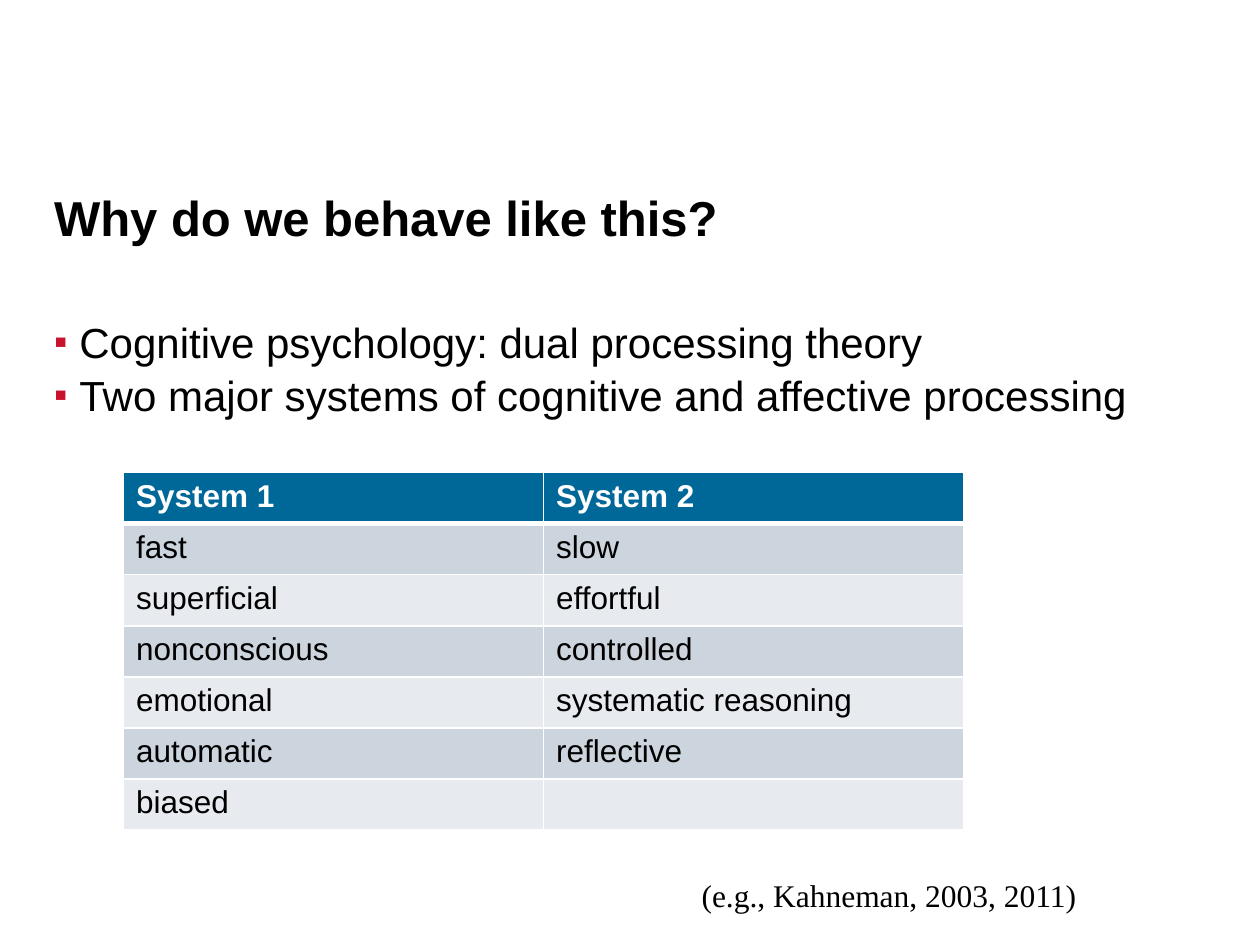
from dataclasses import dataclass

from lxml.etree import SubElement
from pptx import Presentation
from pptx.dml.color import RGBColor
from pptx.oxml.ns import qn
from pptx.slide import Slide
from pptx.table import _Cell
from pptx.text.text import TextFrame, _Paragraph
from pptx.util import Inches, Pt


@dataclass(frozen=True)
class Theme:
    sans: str = "Arial"
    serif: str = "Times New Roman"
    black: str = "000000"
    white: str = "FFFFFF"
    bullet: str = "C9122B"
    header: str = "006899"
    bands: tuple[str, str] = ("CCD4DE", "E7EBEF")
    title_size: int = 28
    body_size: int = 24
    small_size: int = 18


@dataclass(frozen=True)
class Box:
    left: float
    top: float
    width: float
    height: float

    def lengths(self) -> list[Inches]:
        return [Inches(n) for n in (self.left, self.top, self.width, self.height)]


THEME = Theme()
TITLE_BOX = Box(0.43, 1.49, 9.21, 0.92)
BODY_BOX = Box(0.43, 2.49, 9.21, 4.33)
TABLE_BOX = Box(0.98, 3.75, 6.67, 2.84)
CITATION_BOX = Box(5.47, 6.9, 3.27, 0.4)

BULLETS = (
    "Cognitive psychology: dual processing theory",
    "Two major systems of cognitive and affective processing",
)
SYSTEMS = (
    ("System 1", "System 2"),
    ("fast", "slow"),
    ("superficial", "effortful"),
    ("nonconscious", "controlled"),
    ("emotional", "systematic reasoning"),
    ("automatic", "reflective"),
    ("biased", ""),
)


def format_runs(paragraph: _Paragraph, size: int, color: str = THEME.black,
                bold: bool = False, font: str = THEME.sans) -> None:
    for run in paragraph.runs:
        run.font.name = font
        run.font.size = Pt(size)
        run.font.bold = bold
        run.font.color.rgb = RGBColor.from_string(color)


def add_text(slide: Slide, box: Box, text: str, inset: bool = False) -> TextFrame:
    text_frame = slide.shapes.add_textbox(*box.lengths()).text_frame
    text_frame.word_wrap = not inset
    if not inset:
        text_frame.margin_left = text_frame.margin_right = 0
        text_frame.margin_top = text_frame.margin_bottom = 0
    text_frame.text = text
    return text_frame


def add_bullet(paragraph: _Paragraph) -> None:
    properties = paragraph._p.get_or_add_pPr()
    properties.set("marL", str(Inches(0.2)))
    properties.set("indent", str(Inches(-0.2)))
    color = SubElement(properties, qn("a:buClr"))
    SubElement(color, qn("a:srgbClr"), val=THEME.bullet)
    SubElement(properties, qn("a:buSzPct"), val="90000")
    SubElement(properties, qn("a:buFont"), typeface=THEME.sans)
    SubElement(properties, qn("a:buChar"), char="▪")


def style_cell(cell: _Cell, fill: str, bottom_width: int) -> None:
    # Borders come before the fill in the cell properties
    properties = cell._tc.get_or_add_tcPr()
    for side, width in (("L", 1), ("R", 1), ("T", 1), ("B", bottom_width)):
        line = SubElement(properties, qn(f"a:ln{side}"), w=str(Pt(width)))
        solid = SubElement(line, qn("a:solidFill"))
        SubElement(solid, qn("a:srgbClr"), val=THEME.white)
    cell.fill.solid()
    cell.fill.fore_color.rgb = RGBColor.from_string(fill)


def add_systems_table(slide: Slide) -> None:
    row_count, column_count = len(SYSTEMS), len(SYSTEMS[0])
    table = slide.shapes.add_table(row_count, column_count, *TABLE_BOX.lengths()).table
    for column in table.columns:
        column.width = Inches(TABLE_BOX.width / column_count)
    for row_index, labels in enumerate(SYSTEMS):
        is_header = row_index == 0
        fill = THEME.header if is_header else THEME.bands[(row_index - 1) % 2]
        color = THEME.white if is_header else THEME.black
        table.rows[row_index].height = Inches(TABLE_BOX.height / row_count)
        for column_index, label in enumerate(labels):
            cell = table.cell(row_index, column_index)
            cell.text_frame.text = label
            format_runs(cell.text_frame.paragraphs[0], THEME.small_size, color, is_header)
            style_cell(cell, fill, 3 if is_header else 1)


def main() -> None:
    presentation = Presentation()
    presentation.slide_width = Inches(10)
    presentation.slide_height = Inches(7.5)
    slide = presentation.slides.add_slide(presentation.slide_layouts[6])

    # Title
    title = add_text(slide, TITLE_BOX, "Why do we behave like this?")
    format_runs(title.paragraphs[0], THEME.title_size, bold=True)

    # Bullets
    body = add_text(slide, BODY_BOX, "\n".join(BULLETS))
    for paragraph in body.paragraphs:
        paragraph.line_spacing = 1.05
        add_bullet(paragraph)
        format_runs(paragraph, THEME.body_size)

    # Comparison of the two systems
    add_systems_table(slide)

    # Citation
    citation = add_text(slide, CITATION_BOX, "(e.g., Kahneman, 2003, 2011)", inset=True)
    format_runs(citation.paragraphs[0], THEME.small_size, font=THEME.serif)

    presentation.save("out.pptx")


if __name__ == "__main__":
    main()
